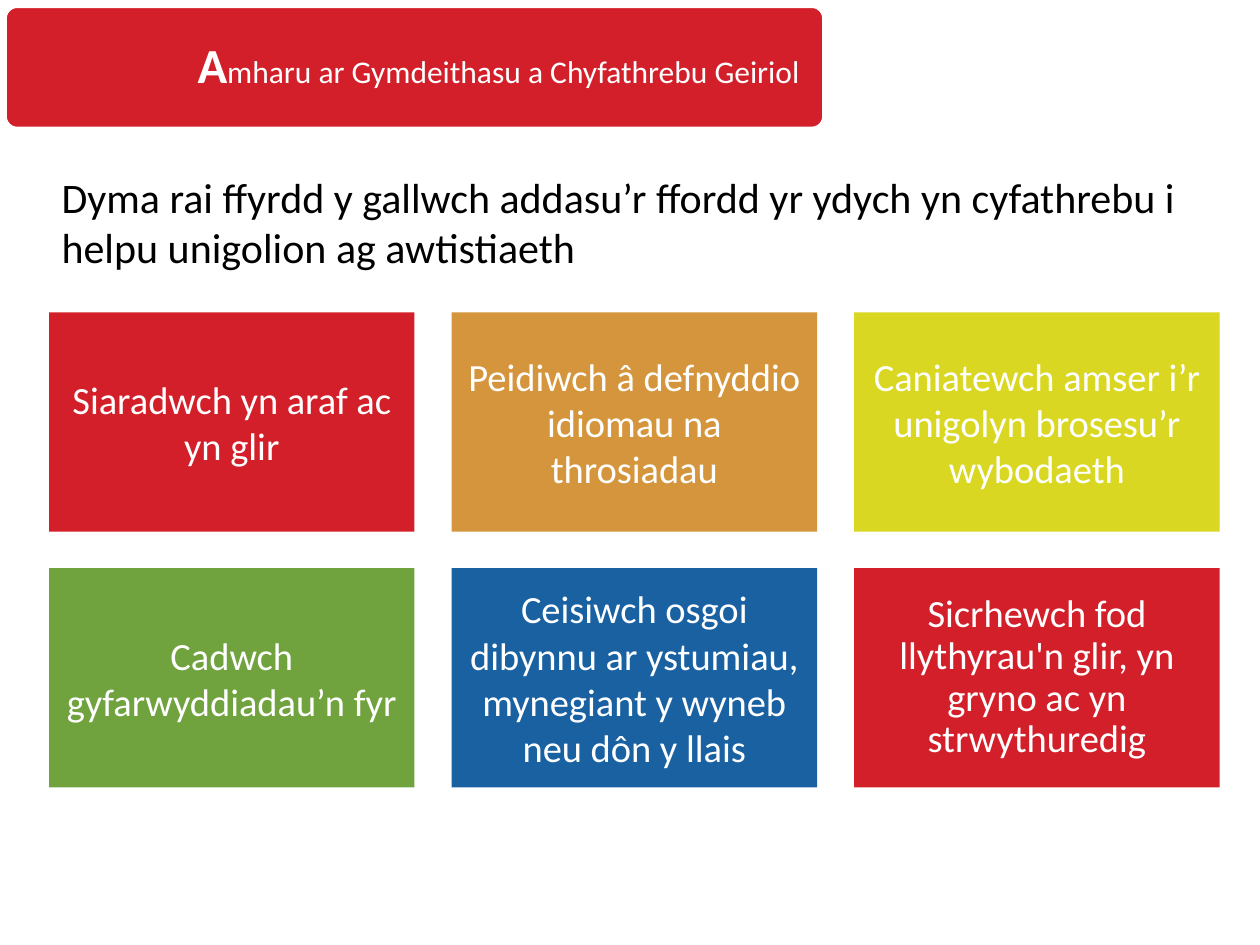
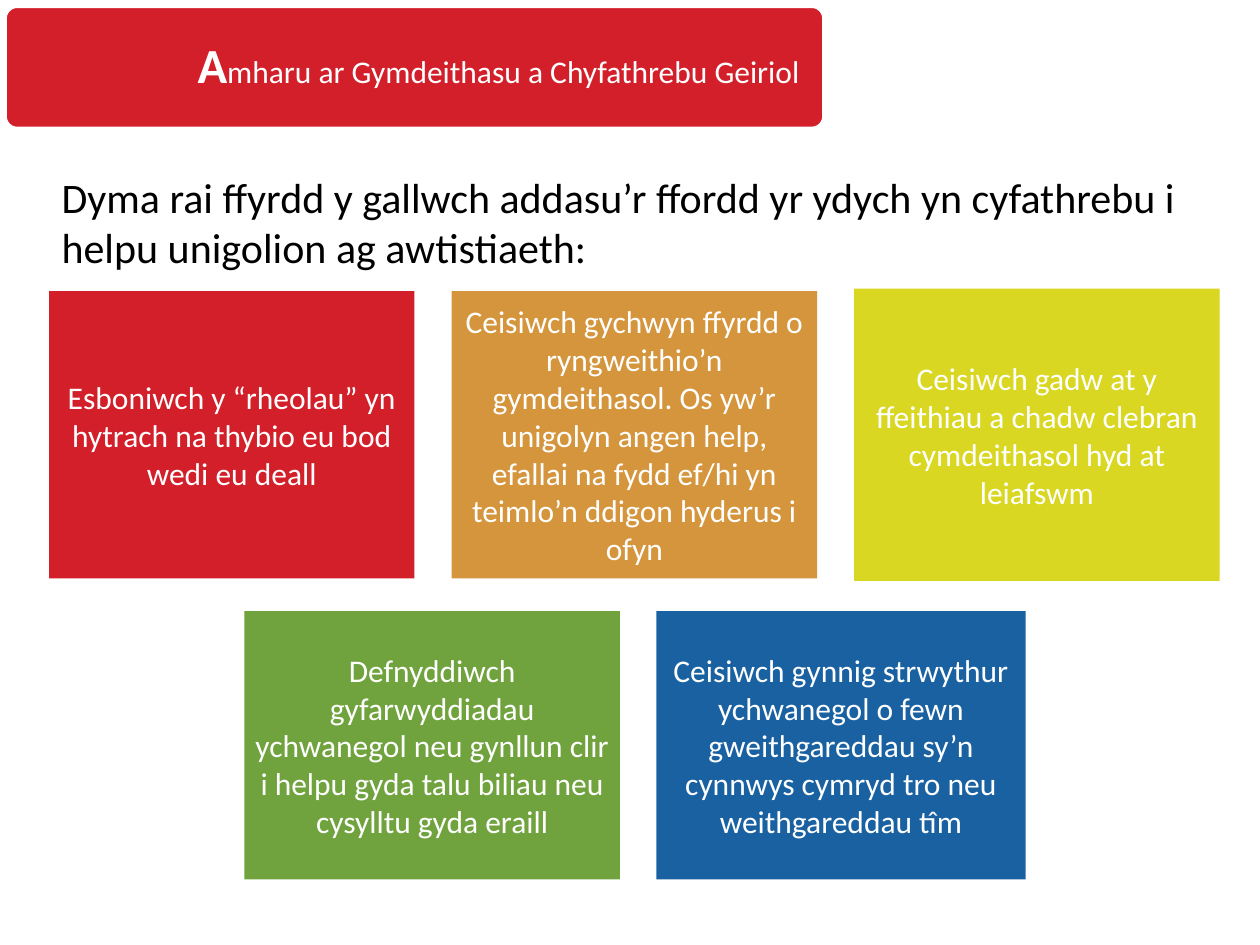
from pptx import Presentation
from pptx.dml.color import RGBColor
from pptx.enum.shapes import MSO_SHAPE
from pptx.enum.text import MSO_ANCHOR, PP_ALIGN
from pptx.util import Inches, Pt

RECTANGLE = MSO_SHAPE.RECTANGLE
ROUNDED = MSO_SHAPE.ROUNDED_RECTANGLE
MIDDLE = MSO_ANCHOR.MIDDLE
LEFT, CENTER = PP_ALIGN.LEFT, PP_ALIGN.CENTER

# Shared colours and font
RED = RGBColor(0xD3, 0x1F, 0x29)
ORANGE = RGBColor(0xD5, 0x95, 0x3C)
YELLOW = RGBColor(0xD9, 0xD7, 0x21)
GREEN = RGBColor(0x70, 0xA3, 0x3E)
BLUE = RGBColor(0x1A, 0x61, 0xA2)
WHITE = RGBColor(0xFF, 0xFF, 0xFF)
BLACK = RGBColor(0, 0, 0)
CARD_COLOURS = [RED, ORANGE, YELLOW, GREEN, BLUE, RED]
FONT = "Calibri"

# Card grid
GRID_LEFT = 0.39
CARD_WIDTH = 2.9
COLUMN_STEP = 3.195

INTRO = ("Dyma rai ffyrdd y gallwch addasu’r ffordd yr ydych yn cyfathrebu i "
         "helpu unigolion ag awtistiaeth")

SPEAKING_TIPS = [
    "Siaradwch yn araf ac yn glir",
    "Peidiwch â defnyddio idiomau na throsiadau",
    "Caniatewch amser i’r unigolyn brosesu’r wybodaeth",
    "Cadwch gyfarwyddiadau’n fyr",
    "Ceisiwch osgoi dibynnu ar ystumiau, mynegiant y wyneb neu dôn y llais",
    "Sicrhewch fod llythyrau'n glir, yn gryno ac yn strwythuredig",
]

# Text with left, top, width and height of each card
SUPPORT_TIPS = [
    ("Esboniwch y “rheolau” yn hytrach na thybio eu bod wedi eu deall",
     (GRID_LEFT, 2.31, CARD_WIDTH, 2.28)),
    ("Ceisiwch gychwyn ffyrdd o ryngweithio’n gymdeithasol. Os yw’r unigolyn "
     "angen help, efallai na fydd ef/hi yn teimlo’n ddigon hyderus i ofyn",
     (GRID_LEFT + COLUMN_STEP, 2.31, CARD_WIDTH, 2.28)),
    ("Ceisiwch gadw at y ffeithiau a chadw clebran cymdeithasol hyd at leiafswm",
     (GRID_LEFT + 2 * COLUMN_STEP, 2.29, CARD_WIDTH, 2.32)),
    ("Defnyddiwch gyfarwyddiadau ychwanegol neu gynllun clir i helpu gyda talu "
     "biliau neu cysylltu gyda eraill", (1.94, 4.85, 2.98, 2.13)),
    ("Ceisiwch gynnig strwythur ychwanegol o fewn gweithgareddau sy’n cynnwys "
     "cymryd tro neu weithgareddau tîm", (5.21, 4.85, 2.93, 2.13)),
]


def set_font(run, size, colour, bold=False):
    run.font.name = FONT
    run.font.size = Pt(size)
    run.font.color.rgb = colour
    run.font.bold = bold


def set_margins(text_frame, margin):
    text_frame.margin_left = text_frame.margin_right = Inches(margin)
    text_frame.margin_top = text_frame.margin_bottom = Inches(margin)


def add_block(slide, kind, box, fill, margin):
    """Add a filled shape with vertically centred, wrapping text."""
    shape = slide.shapes.add_shape(kind, *map(Inches, box))
    shape.shadow.inherit = False
    shape.fill.solid()
    shape.fill.fore_color.rgb = fill
    shape.line.fill.background()
    shape.text_frame.word_wrap = True
    shape.text_frame.vertical_anchor = MIDDLE
    set_margins(shape.text_frame, margin)
    return shape


def add_title_band(slide):
    band = add_block(slide, ROUNDED, (0.04, 0.05, 6.5, 0.97), RED, 0.12)
    band.adjustments[0] = 0.1
    band.line.color.rgb = WHITE
    band.line.width = Pt(2)
    band.text_frame.margin_left = Inches(1.5)
    paragraph = band.text_frame.paragraphs[0]
    paragraph.alignment = LEFT
    paragraph.line_spacing = 0.9
    for text, size, bold in [("A", 28, True),
                             ("mharu ar Gymdeithasu a Chyfathrebu Geiriol", 18, False)]:
        run = paragraph.add_run()
        run.text = text
        set_font(run, size, WHITE, bold)


def add_intro(slide, text):
    box = slide.shapes.add_textbox(Inches(GRID_LEFT), Inches(1.31), Inches(9.29), Inches(0.91))
    box.text_frame.word_wrap = True
    box.text_frame.text = text
    set_font(box.text_frame.paragraphs[0].runs[0], 24, BLACK)


def add_card(slide, text, box, fill, size, margin, line_spacing=None):
    card = add_block(slide, RECTANGLE, box, fill, margin)
    card.text_frame.text = text
    paragraph = card.text_frame.paragraphs[0]
    paragraph.alignment = CENTER
    paragraph.line_spacing = line_spacing
    set_font(paragraph.runs[0], size, WHITE)


def add_tip_slide(presentation, intro):
    slide = presentation.slides.add_slide(presentation.slide_layouts[6])
    add_intro(slide, intro)
    add_title_band(slide)
    return slide


def main():
    presentation = Presentation()
    presentation.slide_width = Inches(10)
    presentation.slide_height = Inches(7.5)

    # Slide 1: speaking tips in a regular grid
    slide = add_tip_slide(presentation, INTRO)
    for index, (text, colour) in enumerate(zip(SPEAKING_TIPS, CARD_COLOURS)):
        row, column = divmod(index, 3)
        box = (GRID_LEFT + column * COLUMN_STEP, 2.48 + row * 2.03, CARD_WIDTH, 1.74)
        line_spacing = 0.9 if index == len(SPEAKING_TIPS) - 1 else None
        add_card(slide, text, box, colour, 22, 0.09, line_spacing)

    # Slide 2: support tips, three above two
    slide = add_tip_slide(presentation, INTRO + ":")
    for (text, box), colour in zip(SUPPORT_TIPS, CARD_COLOURS):
        add_card(slide, text, box, colour, 18, 0.07)

    presentation.save("out.pptx")


if __name__ == "__main__":
    main()
